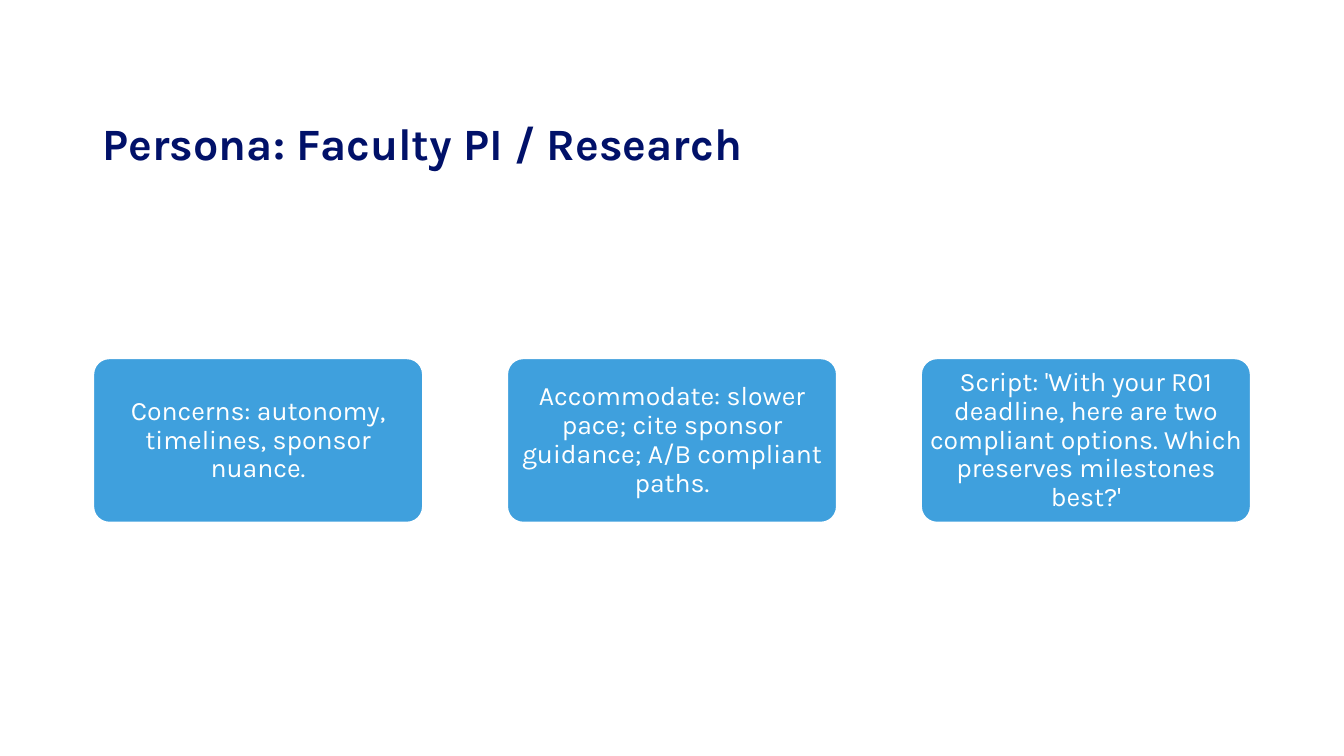
from dataclasses import dataclass

from pptx import Presentation
from pptx import util as u
from pptx.dml.color import RGBColor
from pptx.enum import shapes, text


@dataclass(frozen=True)
class Theme:
    """Colours, font and type sizes of the slide."""
    font: str = "Karla"
    navy: str = "011169"
    blue: str = "3FA0DD"
    white: str = "FFFFFF"
    title_size: int = 32
    card_size: int = 19


def write(frame, words, *, theme, size, color, bold=False,
          align=text.PP_ALIGN.LEFT, insets=(0.1, 0.05, 0.1, 0.05)):
    """Write one formatted paragraph into a text frame."""
    frame.word_wrap = True
    frame.vertical_anchor = text.MSO_ANCHOR.MIDDLE
    (frame.margin_left, frame.margin_top,
     frame.margin_right, frame.margin_bottom) = map(u.Inches, insets)
    paragraph = frame.paragraphs[0]
    paragraph.alignment = align
    paragraph.line_spacing = 0.9
    run = paragraph.add_run()
    run.text = words
    run.font.name = theme.font
    run.font.size = u.Pt(size)
    run.font.bold = bold
    run.font.color.rgb = RGBColor.from_string(color)


class PersonaSlide:
    """Draws the elements of a persona slide in one theme."""

    def __init__(self, slide, theme):
        """Keep the slide and its theme."""
        self.slide = slide
        self.theme = theme

    def title(self, words, left, top, width, height):
        """Add the heading, set low in its box."""
        heading = self.slide.shapes.add_textbox(*map(u.Inches, (left, top, width, height)))
        write(heading.text_frame, words, theme=self.theme, size=self.theme.title_size,
              color=self.theme.navy, bold=True, insets=(0.1, 0.69, 0.1, 0.05))

    def card(self, words, left, top, width, height):
        """Add a rounded card with centred text."""
        card = self.slide.shapes.add_shape(
            shapes.MSO_SHAPE.ROUNDED_RECTANGLE, *map(u.Inches, (left, top, width, height)))
        card.adjustments[0] = 0.1
        card.shadow.inherit = False
        card.fill.solid()
        card.fill.fore_color.rgb = RGBColor.from_string(self.theme.blue)
        card.line.color.rgb = RGBColor.from_string(self.theme.white)
        card.line.width = u.Pt(2)
        write(card.text_frame, words, theme=self.theme, size=self.theme.card_size,
              color=self.theme.white, align=text.PP_ALIGN.CENTER,
              insets=(0.04, 0.03, 0.04, 0.03))


def main():
    """Build and save the slide."""
    deck = Presentation()
    deck.slide_width, deck.slide_height = u.Inches(13.33), u.Inches(7.5)
    persona = PersonaSlide(deck.slides.add_slide(deck.slide_layouts[6]), Theme())
    margin, card_width, card_step = 0.92, 3.28, 4.105
    persona.title("Persona: Faculty PI / Research", margin, 0.4, 11.5, 1.45)
    advice = (
        "Concerns: autonomy, timelines, sponsor nuance.",
        "Accommodate: slower pace; cite sponsor guidance; A/B compliant paths.",
        "Script: 'With your R01 deadline, here are two compliant options. "
        "Which preserves milestones best?'",
    )
    for column, words in enumerate(advice):
        persona.card(words, margin + column * card_step, 3.55, card_width, 1.64)
    deck.save("out.pptx")


if __name__ == "__main__":
    main()
